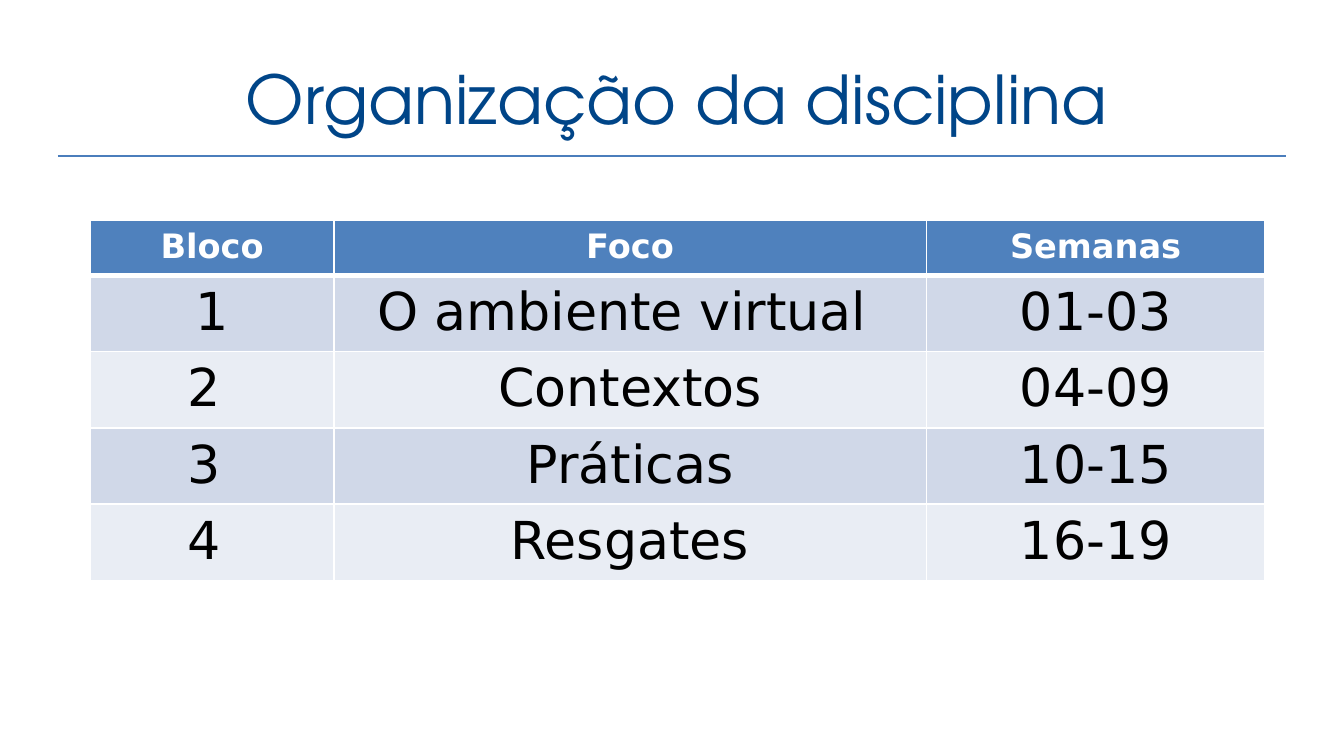
"""Build the course organisation slide: a title, a rule and a table of blocks."""
from dataclasses import dataclass

from lxml import etree
from pptx import Presentation
from pptx.dml.color import RGBColor
from pptx.enum.shapes import MSO_CONNECTOR
from pptx.enum.text import MSO_ANCHOR, MSO_AUTO_SIZE, PP_ALIGN
from pptx.oxml.ns import qn
from pptx.slide import Slide
from pptx.table import _Cell
from pptx.util import Pt

STRAIGHT = MSO_CONNECTOR.STRAIGHT
MIDDLE = MSO_ANCHOR.MIDDLE
FIT_SHAPE = MSO_AUTO_SIZE.SHAPE_TO_FIT_TEXT
CENTER = PP_ALIGN.CENTER

NAVY = RGBColor(0x00, 0x45, 0x88)
BLUE = RGBColor(0x4F, 0x81, 0xBD)
RULE_BLUE = RGBColor(0x4B, 0x7E, 0xBC)
BAND_DARK = RGBColor(0xD0, 0xD8, 0xE8)
BAND_LIGHT = RGBColor(0xE9, 0xED, 0xF4)
WHITE = RGBColor(0xFF, 0xFF, 0xFF)
BLACK = RGBColor(0x00, 0x00, 0x00)

TITLE_FONT = "TeX Gyre Adventor"
TABLE_FONT = "DejaVu Sans"
COLUMN_WIDTHS = (130.3, 317.5, 181.4)
HEADER_HEIGHT = 29.5
BLOCK_HEIGHT = 40.7


@dataclass(frozen=True)
class RowStyle:
    fill: RGBColor
    color: RGBColor
    size: float
    bold: bool
    top: float
    bottom: float


@dataclass(frozen=True)
class Block:
    number: str
    focus: str
    weeks: str


HEADER = Block("Bloco", "Foco", "Semanas")
BLOCKS = (
    Block("1", "O ambiente virtual ", "01-03"),
    Block("2 ", "Contextos", "04-09"),
    Block("3 ", "Práticas", "10-15"),
    Block("4 ", "Resgates", "16-19"),
)


def row_style(index: int) -> RowStyle:
    if index == 0:
        return RowStyle(BLUE, WHITE, 18, True, 1, 3)
    band = BAND_DARK if index % 2 else BAND_LIGHT
    return RowStyle(band, BLACK, 28, False, 3 if index == 1 else 1, 1)


def set_border(cell: _Cell, side: str, width: float) -> None:
    properties = cell._tc.get_or_add_tcPr()
    border = etree.SubElement(properties, qn(f"a:ln{side}"), w=str(Pt(width)))
    solid = etree.SubElement(border, qn("a:solidFill"))
    etree.SubElement(solid, qn("a:srgbClr"), val=str(WHITE))


def fill_cell(cell: _Cell, text: str, style: RowStyle) -> None:
    for side, width in (("L", 1), ("R", 1), ("T", style.top), ("B", style.bottom)):
        set_border(cell, side, width)
    cell.fill.solid()
    cell.fill.fore_color.rgb = style.fill
    cell.text = text
    paragraph = cell.text_frame.paragraphs[0]
    paragraph.alignment = CENTER
    paragraph.font.name = TABLE_FONT
    paragraph.font.size = Pt(style.size)
    paragraph.font.bold = style.bold
    paragraph.font.color.rgb = style.color


def add_title(slide: Slide, text: str) -> None:
    title = slide.shapes.title
    title.left, title.top, title.width, title.height = Pt(76.3), Pt(26.6), Pt(572.4), Pt(51.1)
    frame = title.text_frame
    frame.text = text
    frame.word_wrap = True
    frame.auto_size = FIT_SHAPE
    frame.vertical_anchor = MIDDLE
    heading = frame.paragraphs[0]
    heading.alignment = CENTER
    heading.font.name = TITLE_FONT
    heading.font.size = Pt(36)
    heading.font.color.rgb = NAVY


def add_rule(slide: Slide) -> None:
    rule = slide.shapes.add_connector(STRAIGHT, Pt(31), Pt(83.5), Pt(689), Pt(83.5))
    rule.line.color.rgb = RULE_BLUE
    rule.line.width = Pt(0.75)
    etree.SubElement(rule._element.spPr, qn("a:effectLst"))


def add_blocks_table(slide: Slide) -> None:
    rows = (HEADER, *BLOCKS)
    height = HEADER_HEIGHT + BLOCK_HEIGHT * len(BLOCKS)
    table = slide.shapes.add_table(
        len(rows), len(COLUMN_WIDTHS), Pt(48.5), Pt(118.1), Pt(sum(COLUMN_WIDTHS)), Pt(height)
    ).table
    for column, width in zip(table.columns, COLUMN_WIDTHS):
        column.width = Pt(width)
    for index, block in enumerate(rows):
        table.rows[index].height = Pt(BLOCK_HEIGHT if index else HEADER_HEIGHT)
        for cell, text in zip(table.rows[index].cells, (block.number, block.focus, block.weeks)):
            fill_cell(cell, text, row_style(index))


def main() -> None:
    presentation = Presentation()
    presentation.slide_width, presentation.slide_height = Pt(720), Pt(405)
    slide = presentation.slides.add_slide(presentation.slide_layouts[5])
    add_title(slide, "Organização da disciplina")
    add_blocks_table(slide)
    add_rule(slide)
    presentation.save("out.pptx")


if __name__ == "__main__":
    main()
